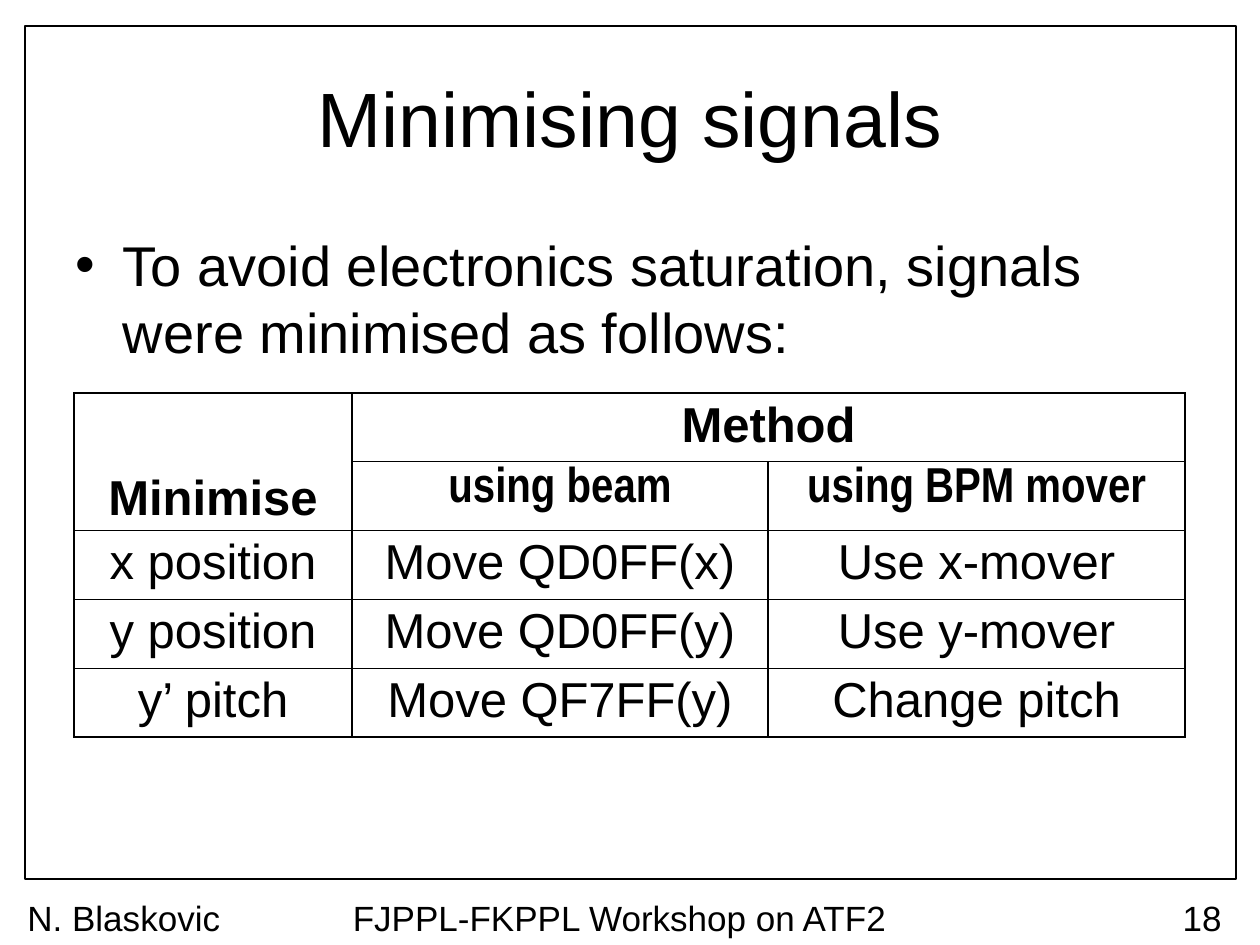
from lxml import etree
from pptx import Presentation
from pptx import util as u
from pptx.dml import color
from pptx.enum import shapes, text
from pptx.oxml import ns

PX = 914400 // 126
BLACK = "000000"
CENTER, LEFT, RIGHT = text.PP_ALIGN.CENTER, text.PP_ALIGN.LEFT, text.PP_ALIGN.RIGHT


def px(length):
    return u.Emu(length * PX)


def rgb(value):
    return color.RGBColor.from_string(value)


class SlideBuilder:
    """Holds the style and the current slide."""
    face, narrow = "Arial", "Arial Narrow"
    line_width = u.Pt(0.75)

    def __init__(self, deck):
        self.slide = deck.slides.add_slide(deck.slide_layouts[1])

    def add_words(self, frame, words, size, align, bold=False, face=None):
        frame.word_wrap = True
        line = frame.paragraphs[0]
        line.alignment = align
        run = line.add_run()
        run.text = words
        run.font.size, run.font.bold = u.Pt(size), bold
        run.font.name = face or self.face
        run.font.color.rgb = rgb(BLACK)
        return line

    def frame(self, *box):
        border = self.slide.shapes.add_shape(
            shapes.MSO_SHAPE.RECTANGLE, *map(px, box))
        border.shadow.inherit = False
        border.fill.background()
        border.line.color.rgb = rgb(BLACK)
        border.line.width = self.line_width

    def placeholder(self, index, words, size, align, anchor, box):
        holder = self.slide.placeholders[index]
        holder.left, holder.top, holder.width, holder.height = map(px, box)
        holder.text_frame.vertical_anchor = anchor
        return self.add_words(holder.text_frame, words, size, align)

    def title(self, words, *box):
        self.placeholder(0, words, 44, CENTER, text.MSO_ANCHOR.MIDDLE, box)

    def bullet(self, words, *box):
        # The bullet and its hanging indent come from the body placeholder
        line = self.placeholder(1, words, 32, LEFT, text.MSO_ANCHOR.TOP, box)
        line.space_before = u.Pt(0)

    def footer(self, words, align, left, width):
        label = self.slide.shapes.add_textbox(*map(px, (left, 890, width, 40)))
        self.add_words(label.text_frame, words, 20, align)

    def cell_borders(self, cell):
        props = cell._tc.get_or_add_tcPr()
        for side in ("lnL", "lnR", "lnT", "lnB"):
            edge = etree.SubElement(props, ns.qn(f"a:{side}"), w=str(self.line_width))
            fill = etree.SubElement(edge, ns.qn("a:solidFill"))
            etree.SubElement(fill, ns.qn("a:srgbClr"), val=BLACK)

    def table(self, rows, left, top, widths, row_height):
        grid = self.slide.shapes.add_table(
            len(rows), len(widths), px(left), px(top),
            px(sum(widths)), px(row_height * len(rows))).table
        grid.first_row = grid.horz_banding = False
        for column, width in zip(grid.columns, widths):
            column.width = px(width)
        for r, row in enumerate(rows):
            grid.rows[r].height = px(row_height)
            for c, words in enumerate(row):
                cell = grid.cell(r, c)
                cell.margin_top = cell.margin_bottom = px(5)
                self.cell_borders(cell)
                cell.fill.background()
                if words:
                    self.add_words(cell.text_frame, words, 28, CENTER, bold=r < 2,
                                   face=self.narrow if r == 1 else self.face)
        return grid


def main():
    deck = Presentation()
    deck.slide_width, deck.slide_height = u.Inches(10), u.Inches(7.5)
    page = SlideBuilder(deck)

    # Frame, title and introduction
    page.frame(25, 26, 1211, 853)
    page.title("Minimising signals", 63, 38, 1134, 158)
    page.bullet("To avoid electronics saturation, signals were minimised as follows:",
                63, 224, 1135, 620)

    # Footer
    page.footer("FJPPL-FKPPL Workshop on ATF2", CENTER, 193, 853)
    page.footer("18", RIGHT, 1165, 69)
    page.footer("N. Blaskovic", LEFT, 15, 218)

    # Methods, with a two-row heading
    methods = page.table([
        ("Minimise", "Method", ""),
        ("", "using beam", "using BPM mover"),
        ("x position", "Move QD0FF(x)", "Use x-mover"),
        ("y position", "Move QD0FF(y)", "Use y-mover"),
        ("y’ pitch", "Move QF7FF(y)", "Change pitch"),
    ], 74, 393, (278, 416, 417), 67)
    minimise = methods.cell(0, 0)
    minimise.merge(methods.cell(1, 0))
    minimise.vertical_anchor = text.MSO_ANCHOR.BOTTOM
    methods.cell(0, 1).merge(methods.cell(0, 2))

    deck.save("out.pptx")


if __name__ == "__main__":
    main()
